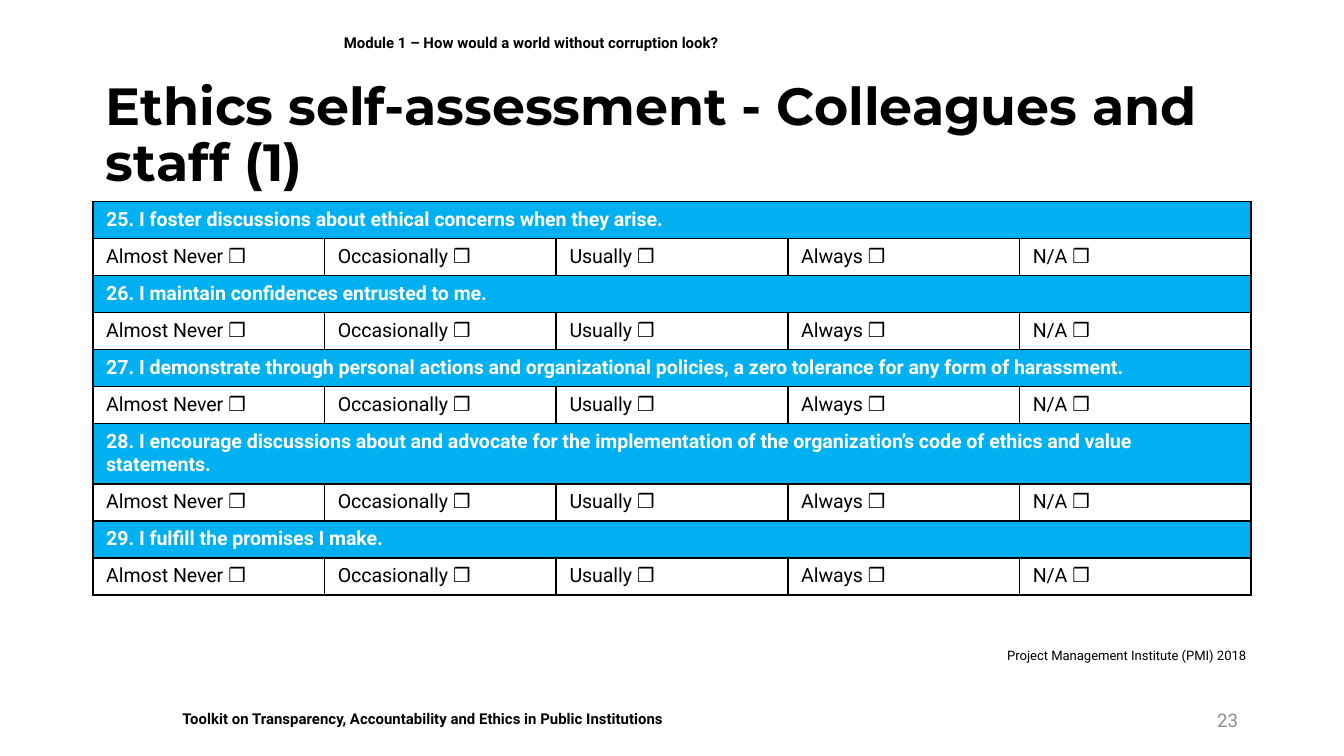
from dataclasses import dataclass

from lxml import etree
from pptx import Presentation
from pptx.dml.color import RGBColor
from pptx.enum.shapes import MSO_SHAPE
from pptx.enum.text import MSO_ANCHOR, PP_ALIGN
from pptx.oxml.ns import qn
from pptx.util import Inches, Pt

RECTANGLE = MSO_SHAPE.RECTANGLE
TOP, MIDDLE = MSO_ANCHOR.TOP, MSO_ANCHOR.MIDDLE
LEFT, RIGHT = PP_ALIGN.LEFT, PP_ALIGN.RIGHT


@dataclass(frozen=True)
class Theme:
    black: str = "000000"
    white: str = "FFFFFF"
    blue: str = "00B0F0"
    gray: str = "8C8C8C"
    heading_font: str = "Montserrat"
    body_font: str = "Roboto"
    title_size: float = 28
    table_size: float = 10.5
    number_size: float = 10
    label_size: float = 8
    source_size: float = 7
    border_width: float = 1


THEME = Theme()
PAGE_WIDTH = 10
PAGE_HEIGHT = PAGE_WIDTH * 9 / 16
ROW_HEIGHT = 0.27
TALL_ROW_HEIGHT = 0.45
LINE_LIMIT = 120
ANSWERS = ["Almost Never", "Occasionally", "Usually", "Always", "N/A"]
STATEMENTS = [
    "25. I foster discussions about ethical concerns when they arise.",
    "26. I maintain confidences entrusted to me.",
    "27. I demonstrate through personal actions and organizational policies, "
    "a zero tolerance for any form of harassment.",
    "28. I encourage discussions about and advocate for the implementation of "
    "the organization’s code of ethics and value statements.",
    "29. I fulfill the promises I make.",
]


def add_span(para, text, size, color=THEME.black, bold=False, font=THEME.body_font):
    span = para.add_run()
    span.text = text
    span.font.name = font
    span.font.size = Pt(size)
    span.font.bold = bold
    span.font.color.rgb = RGBColor.from_string(color)


def add_label(page, box, text, size, align=LEFT, anchor=MIDDLE, **style):
    frame = page.shapes.add_textbox(*map(Inches, box)).text_frame
    frame.word_wrap = True
    frame.vertical_anchor = anchor
    para = frame.paragraphs[0]
    para.alignment = align
    add_span(para, text, size, **style)
    return para


def add_header(page, box):
    add_label(page, box, "Module 1 – How would a world without corruption look?",
              THEME.label_size, bold=True)


def add_title(page, box):
    para = add_label(page, box, "Ethics self-assessment - Colleagues and staff (1)",
                     THEME.title_size, bold=True, font=THEME.heading_font)
    para.line_spacing = 0.9


def add_footer(page, box):
    left, top, width, height = box
    banner = page.shapes.add_shape(
        RECTANGLE, *map(Inches, (left, top + 0.02, 7.17, height - 0.06)))
    banner.shadow.inherit = False
    banner.fill.solid()
    banner.fill.fore_color.rgb = RGBColor.from_string(THEME.white)
    banner.line.fill.background()
    frame = banner.text_frame
    frame.word_wrap = True
    frame.vertical_anchor = TOP
    para = frame.paragraphs[0]
    para.alignment = LEFT
    add_span(para, "Toolkit on Transparency, Accountability and Ethics in Public Institutions",
             THEME.label_size, bold=True)
    number_width = 2.25
    add_label(page, (left + width - number_width, top, number_width, height), "23",
              THEME.number_size, align=RIGHT, color=THEME.gray)


def add_source(page, box):
    add_label(page, box, "Project Management Institute (PMI) 2018",
              THEME.source_size, align=RIGHT, anchor=TOP)


def set_borders(cell):
    properties = cell._tc.get_or_add_tcPr()
    for position, side in enumerate(("a:lnL", "a:lnR", "a:lnT", "a:lnB")):
        line = etree.Element(qn(side), w=str(Pt(THEME.border_width)))
        fill = etree.SubElement(line, qn("a:solidFill"))
        etree.SubElement(fill, qn("a:srgbClr"), val=THEME.black)
        properties.insert(position, line)


def fill_cell(cell, text, color, background, bold):
    add_span(cell.text_frame.paragraphs[0], text, THEME.table_size, color, bold)
    cell.fill.solid()
    cell.fill.fore_color.rgb = RGBColor.from_string(background)


def add_assessment(page, box):
    table = page.shapes.add_table(
        2 * len(STATEMENTS), len(ANSWERS), *map(Inches, box)).table
    for column in table.columns:
        column.width = Inches(box[2] / len(ANSWERS))
    for row in table.rows:
        row.height = Inches(ROW_HEIGHT)
    for index, statement in enumerate(STATEMENTS):
        top = 2 * index
        if len(statement) > LINE_LIMIT:
            table.rows[top].height = Inches(TALL_ROW_HEIGHT)
        heading = table.cell(top, 0)
        heading.merge(table.cell(top, len(ANSWERS) - 1))
        fill_cell(heading, statement, THEME.white, THEME.blue, True)
        for column, answer in enumerate(ANSWERS):
            fill_cell(table.cell(top + 1, column), f"{answer} ❒",
                      THEME.black, THEME.white, False)
    for cell in table.iter_cells():
        set_borders(cell)


def main():
    deck = Presentation()
    deck.slide_width, deck.slide_height = Inches(PAGE_WIDTH), Inches(PAGE_HEIGHT)
    page = deck.slides.add_slide(deck.slide_layouts[6])
    add_footer(page, (1.26, 5.21, 8.05, 0.3))
    add_assessment(page, (0.69, 1.5, 8.62, 2.92))
    add_header(page, (2.46, 0.1, 6.85, 0.44))
    add_title(page, (0.69, 0.64, 8.62, 0.75))
    add_source(page, (7.29, 4.77, 2.08, 0.22))
    deck.save("out.pptx")


if __name__ == "__main__":
    main()
